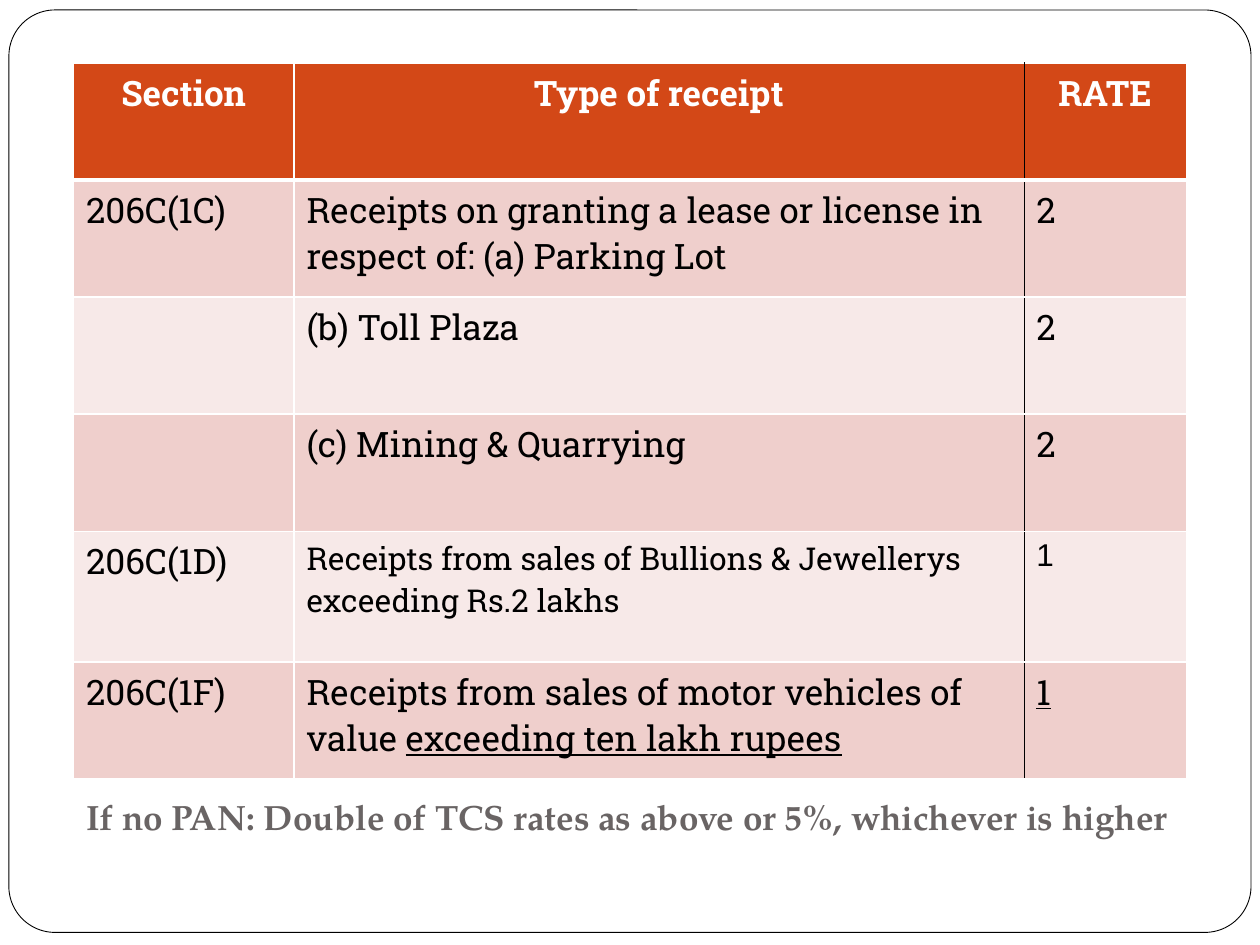
import pptx
import pptx.util
import pptx.dml.color
import pptx.enum.shapes
import pptx.enum.text
import pptx.oxml
import pptx.oxml.ns

RGB = pptx.dml.color.RGBColor
WHITE = RGB(0xFF, 0xFF, 0xFF)
BLACK = RGB(0x00, 0x00, 0x00)
GREY = RGB(0x69, 0x64, 0x64)
ORANGE = RGB(0xD3, 0x48, 0x17)
PINK = RGB(0xEF, 0xCF, 0xCC)
PALE = RGB(0xF7, 0xE9, 0xE8)

BODY_FONT = "Roboto Slab"
TITLE_FONT = "TeX Gyre Pagella"
COLS, ROWS = 120, 90

HEADERS = ["Section", "Type of receipt", "RATE"]
SMALL = {"size": 18}
UNDERLINED = {"underline": True}
RECEIPTS = [
    ["206C(1C)", "Receipts on granting a lease or license in respect of: (a) Parking Lot", "2"],
    ["", "(b) Toll Plaza", "2"],
    ["", "(c) Mining & Quarrying", "2"],
    ["206C(1D)",
     [("Receipts from sales of Bullions & Jewellerys exceeding Rs.2 lakhs", SMALL)],
     [("1", {"size": 18, "font": "Arial"})]],
    ["206C(1F)",
     [("Receipts from sales of motor vehicles of value ", {}),
      ("exceeding ten lakh rupees", UNDERLINED)],
     [("1", UNDERLINED)]],
]


def add_text(p, text, font=BODY_FONT, size=20, color=BLACK, bold=False, underline=None):
    r = p.add_run()
    r.text = text
    r.font.name = font
    r.font.size = pptx.util.Pt(size)
    r.font.color.rgb = color
    r.font.bold = bold
    r.font.underline = underline


def set_borders(cell, **sides):
    tc_pr = cell._tc.get_or_add_tcPr()
    for i, side in enumerate("LRTB"):
        color, width = sides[side]
        ns = pptx.oxml.ns.nsdecls("a")
        tc_pr.insert(i, pptx.oxml.parse_xml(
            f'<a:ln{side} {ns} w="{pptx.util.Pt(width)}"><a:solidFill>'
            f'<a:srgbClr val="{color}"/></a:solidFill></a:ln{side}>'))


class Deck:
    def __init__(self):
        self.prs = pptx.Presentation()
        self.prs.slide_width = pptx.util.Inches(10)
        self.prs.slide_height = pptx.util.Inches(7.5)
        self.s = self.prs.slides.add_slide(self.prs.slide_layouts[5])

    def x(self, cols):
        return round(self.prs.slide_width * cols / COLS)

    def y(self, rows):
        return round(self.prs.slide_height * rows / ROWS)

    def box(self, left, top, width, height):
        return self.x(left), self.y(top), self.x(width), self.y(height)

    def frame(self, *at):
        kind = pptx.enum.shapes.MSO_SHAPE.ROUNDED_RECTANGLE
        sp = self.s.shapes.add_shape(kind, *self.box(*at))
        sp.adjustments[0] = 0.05
        sp.shadow.inherit = False
        sp.fill.solid()
        sp.fill.fore_color.rgb = WHITE
        sp.line.color.rgb = BLACK
        sp.line.width = pptx.util.Pt(0.5)
        self.s.shapes._spTree.insert(2, sp._element)

    def title(self, text, *at):
        sp = self.s.shapes.title
        sp.left, sp.top, sp.width, sp.height = self.box(*at)
        tf = sp.text_frame
        tf.word_wrap = True
        tf.auto_size = pptx.enum.text.MSO_AUTO_SIZE.NONE
        tf.vertical_anchor = pptx.enum.text.MSO_ANCHOR.BOTTOM
        tf.margin_bottom = pptx.util.Inches(0.1)
        p = tf.paragraphs[0]
        p.alignment = pptx.enum.text.PP_ALIGN.LEFT
        add_text(p, text, font=TITLE_FONT, color=GREY, bold=True)

    def table(self, left, top, widths, heights, rows):
        at = self.box(left, top, sum(widths), sum(heights))
        tbl = self.s.shapes.add_table(len(rows), len(widths), *at).table
        for col, width in zip(tbl.columns, widths):
            col.width = self.x(width)
        for row, height in zip(tbl.rows, heights):
            row.height = self.y(height)
        for i, row in enumerate(rows):
            for j, content in enumerate(row):
                self.cell(tbl.cell(i, j), i, j, content)

    def cell(self, cell, i, j, content):
        header = i == 0
        cell.fill.solid()
        cell.fill.fore_color.rgb = ORANGE if header else (PALE, PINK)[i % 2]
        thin, thick, rule = (WHITE, 1), (WHITE, 3), (BLACK, 0.25)
        set_borders(cell, L=rule if j == 2 else thin, R=rule if j == 1 else thin,
                    T=thick if i == 1 else thin, B=thick if header else thin)
        p = cell.text_frame.paragraphs[0]
        style = {}
        if header:
            p.alignment = pptx.enum.text.PP_ALIGN.CENTER
            style = {"color": WHITE, "bold": True}
        runs = [(content, style)] if isinstance(content, str) else content
        for text, fmt in runs:
            if text:
                add_text(p, text, **fmt)


def main():
    deck = Deck()
    deck.frame(0.85, 0.95, 118.3, 87.85)
    deck.title("If no PAN: Double of TCS rates as above or 5%, whichever is higher",
               7, 4, 106, 77)
    row, tall_row = 11.15, 12.45
    deck.table(7, 6, [21, 69.5, 15.5], [row] * 4 + [tall_row, row],
               [HEADERS] + RECEIPTS)
    deck.prs.save("out.pptx")


if __name__ == "__main__":
    main()
